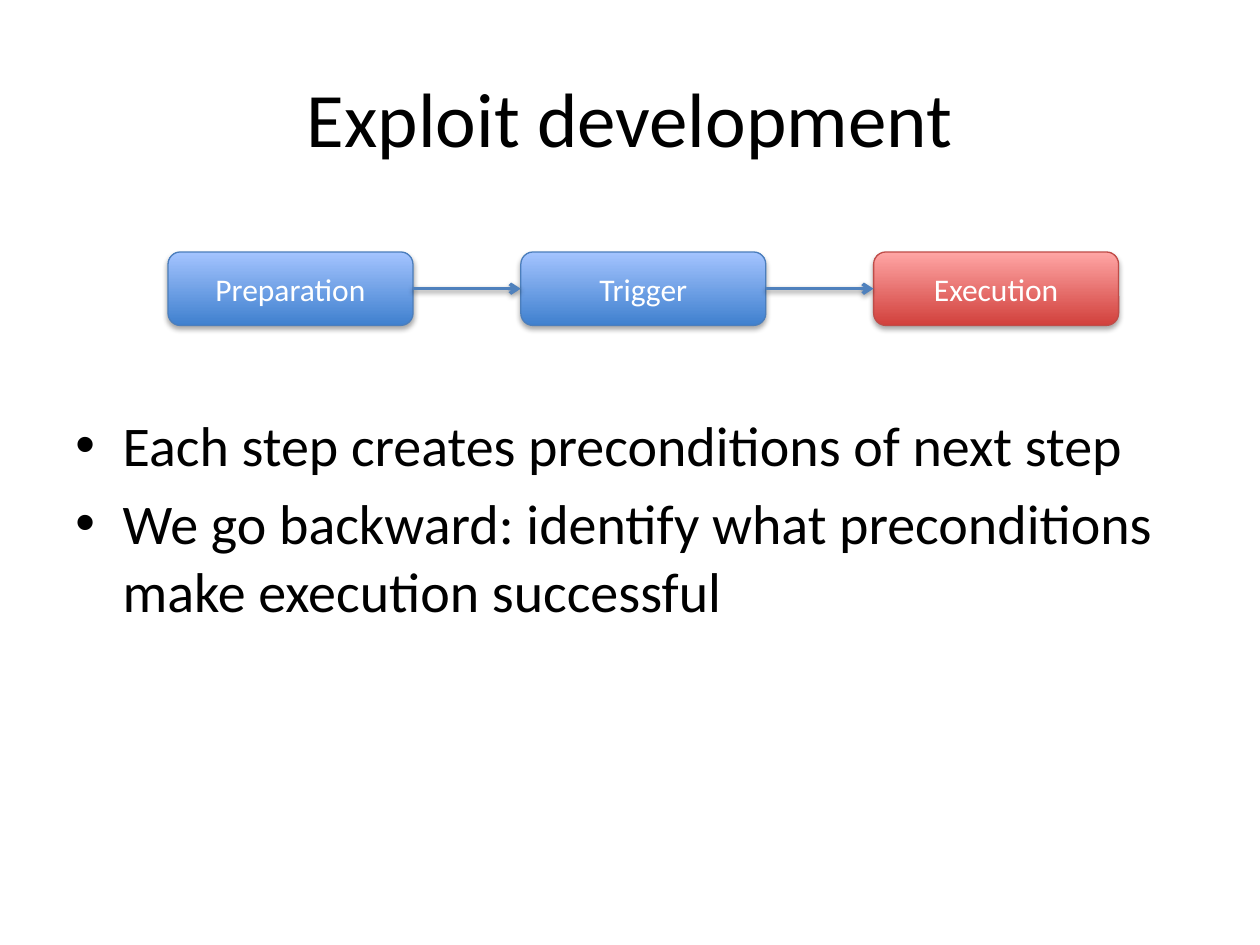
from dataclasses import dataclass

from lxml import etree
from pptx import Presentation
from pptx.dml.color import RGBColor
from pptx.enum.shapes import MSO_CONNECTOR, MSO_SHAPE
from pptx.enum.text import MSO_ANCHOR, PP_ALIGN
from pptx.oxml.ns import qn
from pptx.util import Pt

CENTER, LEFT = PP_ALIGN.CENTER, PP_ALIGN.LEFT
TOP, MIDDLE = MSO_ANCHOR.TOP, MSO_ANCHOR.MIDDLE
ROUNDED = MSO_SHAPE.ROUNDED_RECTANGLE
STRAIGHT = MSO_CONNECTOR.STRAIGHT
LEFT_SITE, RIGHT_SITE = 1, 3


@dataclass(frozen=True)
class Theme:
    """Colours as hex strings and type sizes in points."""
    font: str = "Calibri"
    text: str = "000000"
    step_text: str = "FFFFFF"
    arrow: str = "4F81BD"
    shadow: str = "000000"
    blue: tuple = ("3F80CE", "A4C4FF", "4B7EBC")
    red: tuple = ("D1403C", "FFA6A5", "BF4C48")
    title_size: int = 44
    body_size: int = 32
    step_size: int = 18


THEME = Theme()
STEPS = [("Preparation", THEME.blue), ("Trigger", THEME.blue), ("Execution", THEME.red)]
BULLETS = [
    "Each step creates preconditions of next step",
    "We go backward: identify what preconditions make execution successful",
]
STEP_LEFT, STEP_TOP, STEP_WIDTH, STEP_HEIGHT, STEP_PITCH = 96, 144, 140, 42, 201.6


def apply_format(target, values):
    """Set each named attribute on the target."""
    for name, value in values.items():
        setattr(target, name, value)


def write_text(shape, lines, size, color, alignment, anchor):
    """Fill a shape with formatted paragraphs and return them."""
    frame = shape.text_frame
    apply_format(frame, {"text": "\n".join(lines), "word_wrap": True, "vertical_anchor": anchor})
    for paragraph in frame.paragraphs:
        paragraph.alignment = alignment
        apply_format(paragraph.runs[0].font, {"name": THEME.font, "size": Pt(size)})
        paragraph.runs[0].font.color.rgb = RGBColor.from_string(color)
    return frame.paragraphs


def add_text(slide, box, lines, size, alignment, anchor):
    """Add a text box and return its paragraphs."""
    shape = slide.shapes.add_textbox(*map(Pt, box))
    return write_text(shape, lines, size, THEME.text, alignment, anchor)


def add_bullet(paragraph):
    """Give a paragraph a hanging round bullet."""
    paragraph.space_before = Pt(THEME.body_size * 0.2)
    properties = paragraph._p.get_or_add_pPr()
    properties.set("marL", str(Pt(27)))
    properties.set("indent", str(-Pt(27)))
    etree.SubElement(properties, qn("a:buFont"), typeface="Arial")
    etree.SubElement(properties, qn("a:buChar"), char="•")


def add_shadow(shape, distance, opacity):
    """Add a soft shadow that falls straight down."""
    effects = etree.SubElement(shape._element.spPr, qn("a:effectLst"))
    shadow = etree.SubElement(
        effects, qn("a:outerShdw"), blurRad=str(Pt(3.1)), dist=str(Pt(distance)),
        dir="5400000", rotWithShape="0")
    color = etree.SubElement(shadow, qn("a:srgbClr"), val=THEME.shadow)
    etree.SubElement(color, qn("a:alpha"), val=str(opacity * 1000))


def add_step(slide, index, label, colors):
    """Add one gradient step box at its place in the row."""
    left = STEP_LEFT + index * STEP_PITCH
    shape = slide.shapes.add_shape(
        ROUNDED, Pt(left), Pt(STEP_TOP), Pt(STEP_WIDTH), Pt(STEP_HEIGHT))
    bottom, top, outline = map(RGBColor.from_string, colors)
    shape.fill.gradient()
    shape.fill.gradient_angle = 90
    for stop, color, position in zip(shape.fill.gradient_stops, (bottom, top), (0, 1)):
        stop.color.rgb = color
        stop.position = position
    shape.line.color.rgb = outline
    shape.line.width = Pt(0.75)
    add_shadow(shape, 1.8, 35)
    write_text(shape, [label], THEME.step_size, THEME.step_text, CENTER, MIDDLE)
    return shape


def add_arrow(slide, source, target):
    """Connect two neighbouring steps with an arrow."""
    connector = slide.shapes.add_connector(STRAIGHT, 0, 0, 0, 0)
    connector.begin_connect(source, RIGHT_SITE)
    connector.end_connect(target, LEFT_SITE)
    connector.line.color.rgb = RGBColor.from_string(THEME.arrow)
    connector.line.width = Pt(2)
    line = connector._element.spPr.find(qn("a:ln"))
    etree.SubElement(line, qn("a:tailEnd"), type="arrow")
    add_shadow(connector, 1.6, 38)


def main():
    """Build and save the slide."""
    presentation = Presentation()
    apply_format(presentation, {"slide_width": Pt(720), "slide_height": Pt(540)})
    slide = presentation.slides.add_slide(presentation.slide_layouts[6])
    add_text(slide, (36, 21.6, 648, 90), ["Exploit development"],
             THEME.title_size, CENTER, MIDDLE)
    for paragraph in add_text(slide, (36, 231, 648, 251), BULLETS, THEME.body_size, LEFT, TOP):
        add_bullet(paragraph)
    steps = [add_step(slide, index, *step) for index, step in enumerate(STEPS)]
    for source, target in zip(steps, steps[1:]):
        add_arrow(slide, source, target)
    presentation.save("out.pptx")


if __name__ == "__main__":
    main()
